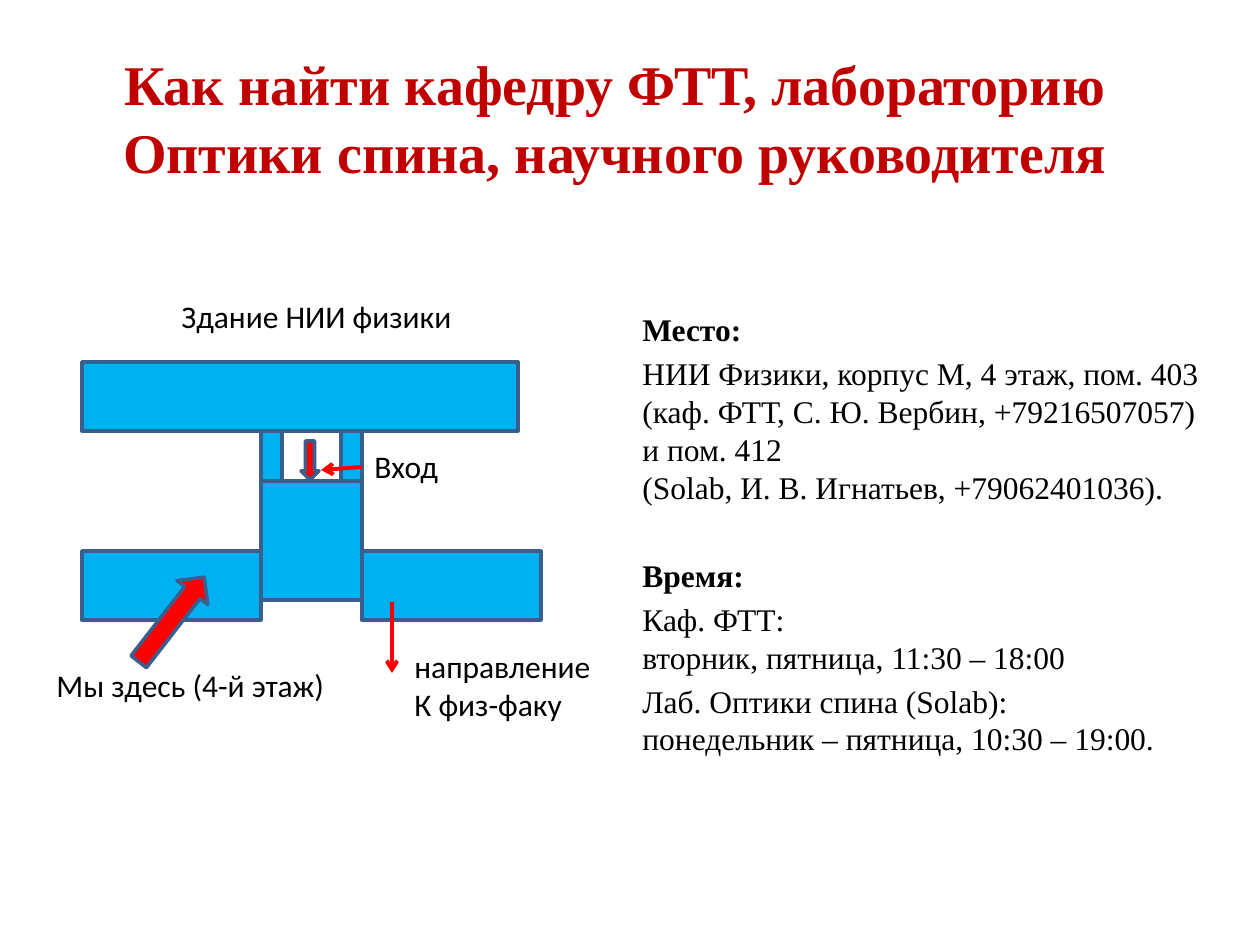
from dataclasses import dataclass

import lxml.etree
import pptx
import pptx.dml.color
import pptx.enum.shapes
import pptx.enum.text
import pptx.oxml.ns
import pptx.util

SHAPE = pptx.enum.shapes.MSO_SHAPE
ALIGN = pptx.enum.text.PP_ALIGN
ANCHOR = pptx.enum.text.MSO_ANCHOR


@dataclass(frozen=True)
class Theme:
    heading: str = "C00000"
    ink: str = "000000"
    building: str = "00B0F0"
    outline: str = "3A5F8C"
    route: str = "FF0000"
    serif: str = "Times New Roman"
    sans: str = "Calibri"
    title_size: int = 32
    text_size: int = 18
    outline_width: float = 2
    route_width: float = 2.25
    gap: float = 3.6
    section_gap: float = 28.7


def px(length):
    return pptx.util.Emu(round(length * 914400 / 126))


def rgb(value):
    return pptx.dml.color.RGBColor.from_string(value)


def write(paragraph, text, *, font, size, color, bold=False, align=ALIGN.LEFT, before=0):
    """Fill a paragraph; a newline in the text becomes a line break."""
    paragraph.text = text
    paragraph.alignment = align
    paragraph.space_before = pptx.util.Pt(before)
    for run in paragraph.runs:
        run.font.name = font
        run.font.size = pptx.util.Pt(size)
        run.font.bold = bold
        run.font.color.rgb = rgb(color)


class SlideBuilder:
    def __init__(self, slide, theme):
        self.slide = slide
        self.theme = theme

    def text(self, box, paragraphs, *, wrap=True, anchor=ANCHOR.TOP, **common):
        """Add a text box from (text, own format) pairs that share a common format."""
        frame = self.slide.shapes.add_textbox(*map(px, box)).text_frame
        frame.word_wrap = wrap
        frame.vertical_anchor = anchor
        for index, (content, own) in enumerate(paragraphs):
            paragraph = frame.add_paragraph() if index else frame.paragraphs[0]
            write(paragraph, content, **{**common, **own})

    def label(self, box, *lines):
        self.text(box, [(line, {}) for line in lines], wrap=False,
                  font=self.theme.sans, size=self.theme.text_size, color=self.theme.ink)

    def block(self, box, fill, kind=SHAPE.RECTANGLE, rotation=0):
        shape = self.slide.shapes.add_shape(kind, *map(px, box))
        shape.rotation = rotation
        shape.shadow.inherit = False
        shape.fill.solid()
        shape.fill.fore_color.rgb = rgb(fill)
        shape.line.color.rgb = rgb(self.theme.outline)
        shape.line.width = pptx.util.Pt(self.theme.outline_width)

    def pointer(self, start, end):
        """Add a thin line with an open arrowhead at its end."""
        line = self.slide.shapes.add_connector(
            pptx.enum.shapes.MSO_CONNECTOR.STRAIGHT, *map(px, start + end))
        line.line.color.rgb = rgb(self.theme.route)
        line.line.width = pptx.util.Pt(self.theme.route_width)
        qn = pptx.oxml.ns.qn
        properties = line.line._get_or_add_ln()
        lxml.etree.SubElement(properties, qn("a:tailEnd"), type="arrow")
        lxml.etree.SubElement(properties.getparent(), qn("a:effectLst"))


def draw_plan(builder):
    theme = builder.theme
    buildings = [
        (82, 362, 436, 69),
        (261, 481, 101, 119),
        (82, 551, 179, 69),
        (362, 551, 179, 69),
        (261, 431, 21, 50),
        (341, 431, 21, 50),
    ]
    for building in buildings:
        builder.block(building, theme.building)
    builder.block((118, 600, 107, 39), theme.route, SHAPE.RIGHT_ARROW, rotation=307.8)
    builder.block((301, 441, 18, 39), theme.route, SHAPE.DOWN_ARROW)
    builder.pointer((362, 467), (321, 470))
    builder.pointer((392, 602), (392, 673))

    builder.label((169, 291, 299, 50), "Здание НИИ физики")
    builder.label((362, 441, 89, 50), "Вход")
    builder.label((44, 660, 296, 50), "Мы здесь (4-й этаж)")
    builder.label((402, 641, 203, 89), "направление", "К физ-факу")


def main():
    deck = pptx.Presentation()
    deck.slide_width, deck.slide_height = px(1260), px(945)
    theme = Theme()
    builder = SlideBuilder(deck.slides.add_slide(deck.slide_layouts[6]), theme)

    builder.text(
        (48, 38, 1134, 158),
        [("Как найти кафедру ФТТ, лабораторию Оптики спина, научного руководителя", {})],
        anchor=ANCHOR.MIDDLE, align=ALIGN.CENTER, bold=True,
        font=theme.serif, size=theme.title_size, color=theme.heading)

    details = [
        ("Место:", {"bold": True}),
        ("НИИ Физики, корпус М, 4 этаж, пом. 403 (каф. ФТТ, С. Ю. Вербин, +79216507057) "
         "и пом. 412\n(Solab, И. В. Игнатьев, +79062401036).", {}),
        ("Время:", {"bold": True, "before": theme.section_gap}),
        ("Каф. ФТТ:\nвторник, пятница, 11:30 – 18:00", {}),
        ("Лаб. Оптики спина (Solab):\nпонедельник – пятница, 10:30 – 19:00.", {}),
    ]
    builder.text((630, 304, 586, 437), details, before=theme.gap,
                 font=theme.serif, size=theme.text_size, color=theme.ink)

    draw_plan(builder)
    deck.save("out.pptx")


if __name__ == "__main__":
    main()
